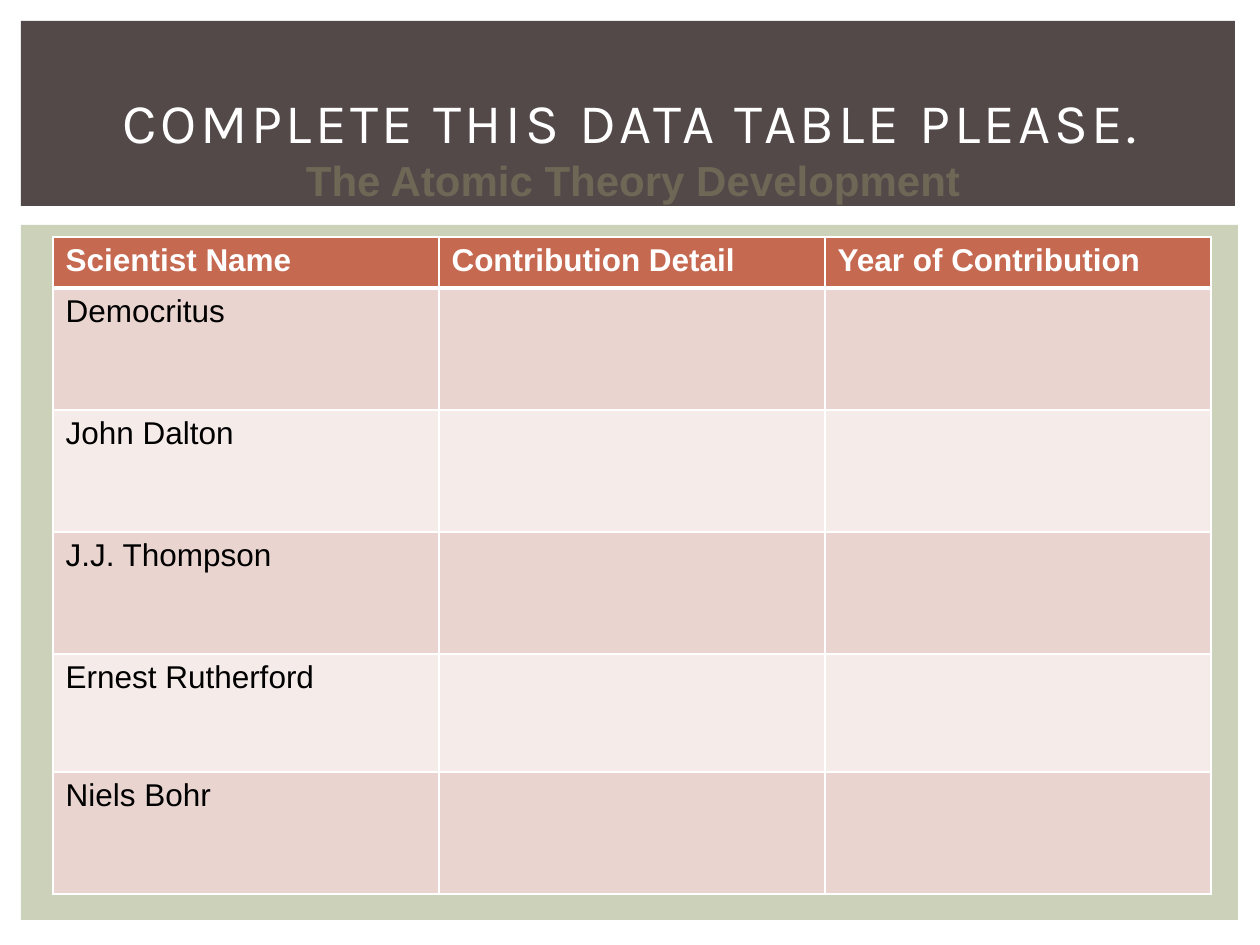
from dataclasses import dataclass

from lxml import etree
from pptx import Presentation
from pptx.dml.color import RGBColor
from pptx.enum.shapes import MSO_SHAPE
from pptx.enum.text import MSO_ANCHOR, PP_ALIGN
from pptx.oxml.ns import qn
from pptx.util import Emu, Pt

RECTANGLE = MSO_SHAPE.RECTANGLE
CENTER = PP_ALIGN.CENTER
LEFT = PP_ALIGN.LEFT
MIDDLE = MSO_ANCHOR.MIDDLE
EMU_PER_PX = 914400 / 126


@dataclass(frozen=True)
class Theme:
    panel: str = "CCD1B9"
    band: str = "534949"
    header: str = "C66951"
    odd_row: str = "EAD4D0"
    even_row: str = "F5EBE9"
    white: str = "FFFFFF"
    black: str = "000000"
    olive: str = "6E6756"
    heading_font: str = "Karla"
    body_font: str = "Arial"
    heading_size: int = 32
    caption_size: int = 24
    table_size: int = 18


def px(length):
    return Emu(round(length * EMU_PER_PX))


def paint(fill, color):
    fill.solid()
    fill.fore_color.rgb = RGBColor.from_string(color)


class SlideBuilder:
    def __init__(self, slide, theme):
        self.slide = slide
        self.theme = theme

    def add_text(self, frame, text, color, align=LEFT, spacing=None, **font_format):
        paragraph = frame.paragraphs[0]
        paragraph.alignment = align
        run = paragraph.add_run()
        run.text = text
        for name, value in font_format.items():
            setattr(run.font, name, value)
        run.font.color.rgb = RGBColor.from_string(color)
        if spacing:
            run._r.get_or_add_rPr().set("spc", str(spacing * 100))

    def block(self, box, color):
        panel = self.slide.shapes.add_shape(RECTANGLE, *map(px, box))
        panel.shadow.inherit = False
        paint(panel.fill, color)
        panel.line.fill.background()

    def title(self, box, text):
        heading = self.slide.shapes.title
        for name, value in zip(("left", "top", "width", "height"), box):
            setattr(heading, name, px(value))
        heading.text_frame.vertical_anchor = MIDDLE
        self.add_text(heading.text_frame, text, self.theme.white, CENTER, 2,
                      name=self.theme.heading_font, size=Pt(self.theme.heading_size))
        self.slide.shapes._spTree.append(heading._element)

    def caption(self, box, text):
        frame = self.slide.shapes.add_textbox(*map(px, box)).text_frame
        frame.word_wrap = True
        frame.vertical_anchor = MIDDLE
        self.add_text(frame, text, self.theme.olive, CENTER, bold=True,
                      name=self.theme.body_font, size=Pt(self.theme.caption_size))

    def border(self, cell, widths):
        properties = cell._tc.get_or_add_tcPr()
        for position, (side, width) in enumerate(widths.items()):
            line = etree.Element(qn(f"a:ln{side}"), w=str(Pt(width)))
            solid = etree.SubElement(line, qn("a:solidFill"))
            etree.SubElement(solid, qn("a:srgbClr"), val=self.theme.white)
            properties.insert(position, line)

    def table(self, box, headers, names, row_heights):
        theme = self.theme
        rows = [headers] + [[name] + [""] * (len(headers) - 1) for name in names]
        grid = self.slide.shapes.add_table(
            len(rows), len(headers), *map(px, box)).table
        for column in grid.columns:
            column.width = px(box[2] / len(headers))
        for index, (texts, height) in enumerate(zip(rows, row_heights)):
            is_header = index == 0
            grid.rows[index].height = px(height)
            fill = theme.odd_row if index % 2 else theme.even_row
            for cell, text in zip(grid.rows[index].cells, texts):
                paint(cell.fill, theme.header if is_header else fill)
                self.border(cell, {"L": 1, "R": 1, "T": 3 if index == 1 else 1,
                                   "B": 3 if is_header else 1})
                if text:
                    self.add_text(cell.text_frame, text,
                                  theme.white if is_header else theme.black,
                                  name=theme.body_font, size=Pt(theme.table_size),
                                  bold=is_header)


def main():
    presentation = Presentation()
    presentation.slide_width = px(1260)
    presentation.slide_height = px(945)
    theme = Theme()
    slide = presentation.slides.add_slide(presentation.slide_layouts[5])
    builder = SlideBuilder(slide, theme)

    builder.block((21, 225, 1217, 695), theme.panel)
    builder.block((21, 21, 1214, 185), theme.band)
    builder.table(
        (53, 237, 1158, 657),
        ["Scientist Name", "Contribution Detail", "Year of Contribution"],
        ["Democritus", "John Dalton", "J.J. Thompson", "Ernest Rutherford",
         "Niels Bohr"],
        [51, 122, 122, 122, 118, 122],
    )
    builder.title((53, 49, 1155, 145), "COMPLETE THIS DATA TABLE PLEASE.")
    builder.caption((203, 150, 860, 60), "The Atomic Theory Development")

    presentation.save("out.pptx")


if __name__ == "__main__":
    main()
